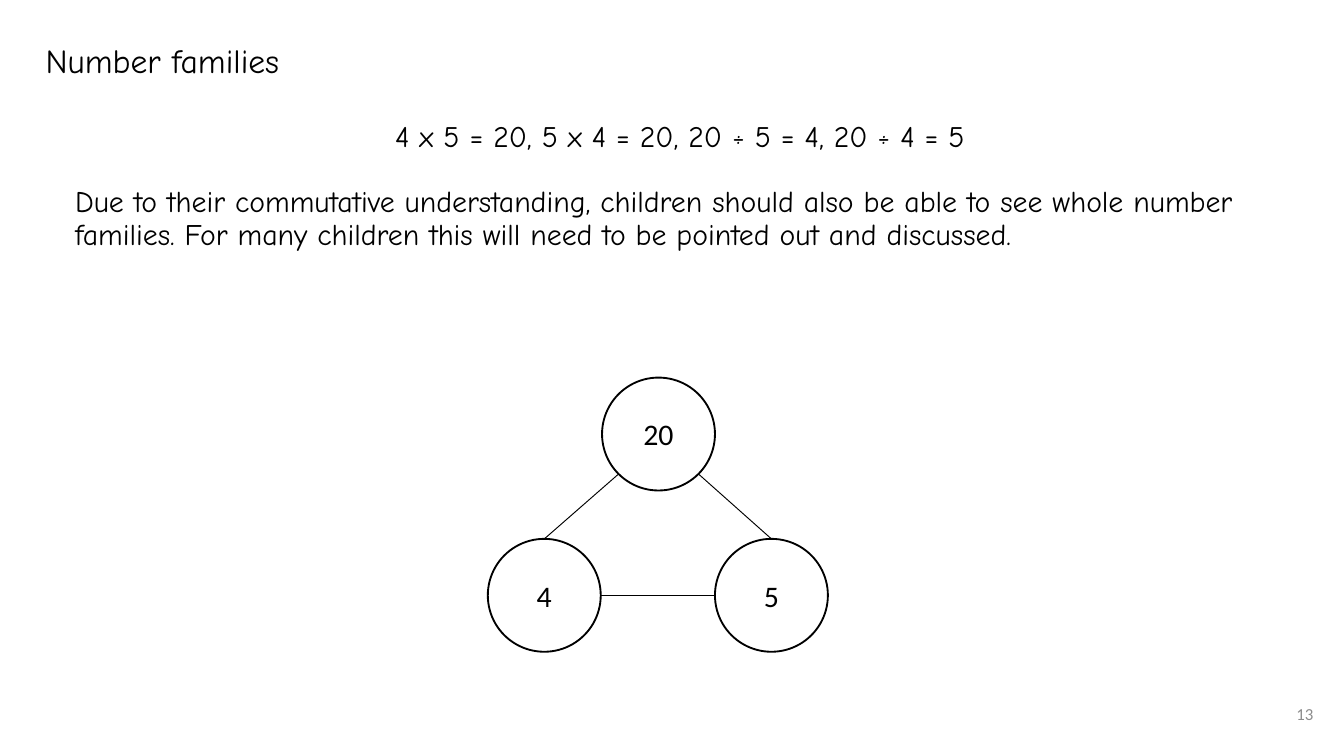
from math import sqrt

from lxml.etree import SubElement
from pptx import Presentation
from pptx.dml.color import RGBColor
from pptx.enum.shapes import MSO_CONNECTOR, MSO_SHAPE
from pptx.enum.text import MSO_ANCHOR, PP_ALIGN
from pptx.oxml.ns import qn
from pptx.util import Inches, Pt

COLORS = {"ink": "000000", "page_number": "8C8C8C"}
HEADING_FONT = "Comic Neue"
NUMBER_FONT = "Calibri"
DIAMETER = 0.84
RADIUS = DIAMETER / 2
CENTERS = {"20": (4.9, 3.23), "4": (4.05, 4.43), "5": (5.74, 4.43)}


def color(name):
    return RGBColor.from_string(COLORS[name])


def style_paragraph(paragraph, size, font=HEADING_FONT, ink="ink", align=PP_ALIGN.LEFT):
    paragraph.alignment = align
    paragraph.font.size = Pt(size)
    paragraph.font.name = font
    paragraph.font.color.rgb = color(ink)


def add_text_frame(slide, left, top, width, height, anchor=MSO_ANCHOR.TOP):
    box = slide.shapes.add_textbox(Inches(left), Inches(top), Inches(width), Inches(height))
    frame = box.text_frame
    frame.word_wrap = True
    frame.vertical_anchor = anchor
    frame.margin_left = frame.margin_right = Inches(0.1)
    frame.margin_top = frame.margin_bottom = Inches(0.1)
    return frame


def add_title(slide, title):
    heading = add_text_frame(slide, 0.24, 0.23, 9.32, 0.48).paragraphs[0]
    heading.text = title
    heading.line_spacing = 0.9
    style_paragraph(heading, 18)


def add_explanation(slide, equations, reason):
    frame = add_text_frame(slide, 0.34, 0.81, 9.32, 1.4)
    frame.text = f"{equations}\n{reason}"
    for paragraph, align in zip(frame.paragraphs, (PP_ALIGN.CENTER, PP_ALIGN.LEFT)):
        style_paragraph(paragraph, 16, align=align)
        paragraph.line_spacing = 0.9
        paragraph._p.get_or_add_pPr().set("marL", str(Inches(0.12)))
    frame.paragraphs[1].space_before = Pt(17.5)


def add_page_number(slide, number):
    footer = add_text_frame(slide, 9.27, 5.1, 0.6, 0.43, MSO_ANCHOR.MIDDLE).paragraphs[0]
    footer.text = number
    style_paragraph(footer, 9, NUMBER_FONT, "page_number", PP_ALIGN.RIGHT)


def add_number_circle(slide, number):
    x, y = CENTERS[number]
    circle = slide.shapes.add_shape(
        MSO_SHAPE.OVAL, Inches(x - RADIUS), Inches(y - RADIUS),
        Inches(DIAMETER), Inches(DIAMETER))
    circle.shadow.inherit = False
    circle.fill.background()
    circle.line.color.rgb = color("ink")
    circle.line.width = Pt(1)
    circle.text_frame.vertical_anchor = MSO_ANCHOR.MIDDLE
    label = circle.text_frame.paragraphs[0]
    label.text = number
    style_paragraph(label, 16, NUMBER_FONT, align=PP_ALIGN.CENTER)


def rim_point(number, dx, dy):
    """Point on a circle's rim, offset from its centre in radii."""
    x, y = CENTERS[number]
    return Inches(x + dx * RADIUS), Inches(y + dy * RADIUS)


def add_link(slide, start, end):
    link = slide.shapes.add_connector(MSO_CONNECTOR.STRAIGHT, *start, *end)
    link.line.color.rgb = color("ink")
    link.line.width = Pt(0.5)
    SubElement(link._element.spPr, qn("a:effectLst"))


def add_number_family(slide):
    for number in CENTERS:
        add_number_circle(slide, number)
    diagonal = sqrt(0.5)
    for factor, side in (("4", -1), ("5", 1)):
        add_link(slide, rim_point("20", side * diagonal, diagonal), rim_point(factor, 0, -1))
    add_link(slide, rim_point("4", 1, 0), rim_point("5", -1, 0))


def main():
    presentation = Presentation()
    presentation.slide_width = Inches(10)
    presentation.slide_height = Inches(10 * 9 / 16)
    slide = presentation.slides.add_slide(presentation.slide_layouts[6])
    add_title(slide, "Number families")
    add_explanation(
        slide,
        "4 x 5 = 20, 5 x 4 = 20, 20 ÷ 5 = 4, 20 ÷ 4 = 5",
        "Due to their commutative understanding, children should also be able to see "
        "whole number families. For many children this will need to be pointed out "
        "and discussed.")
    add_page_number(slide, "13")
    add_number_family(slide)
    presentation.save("out.pptx")


if __name__ == "__main__":
    main()
